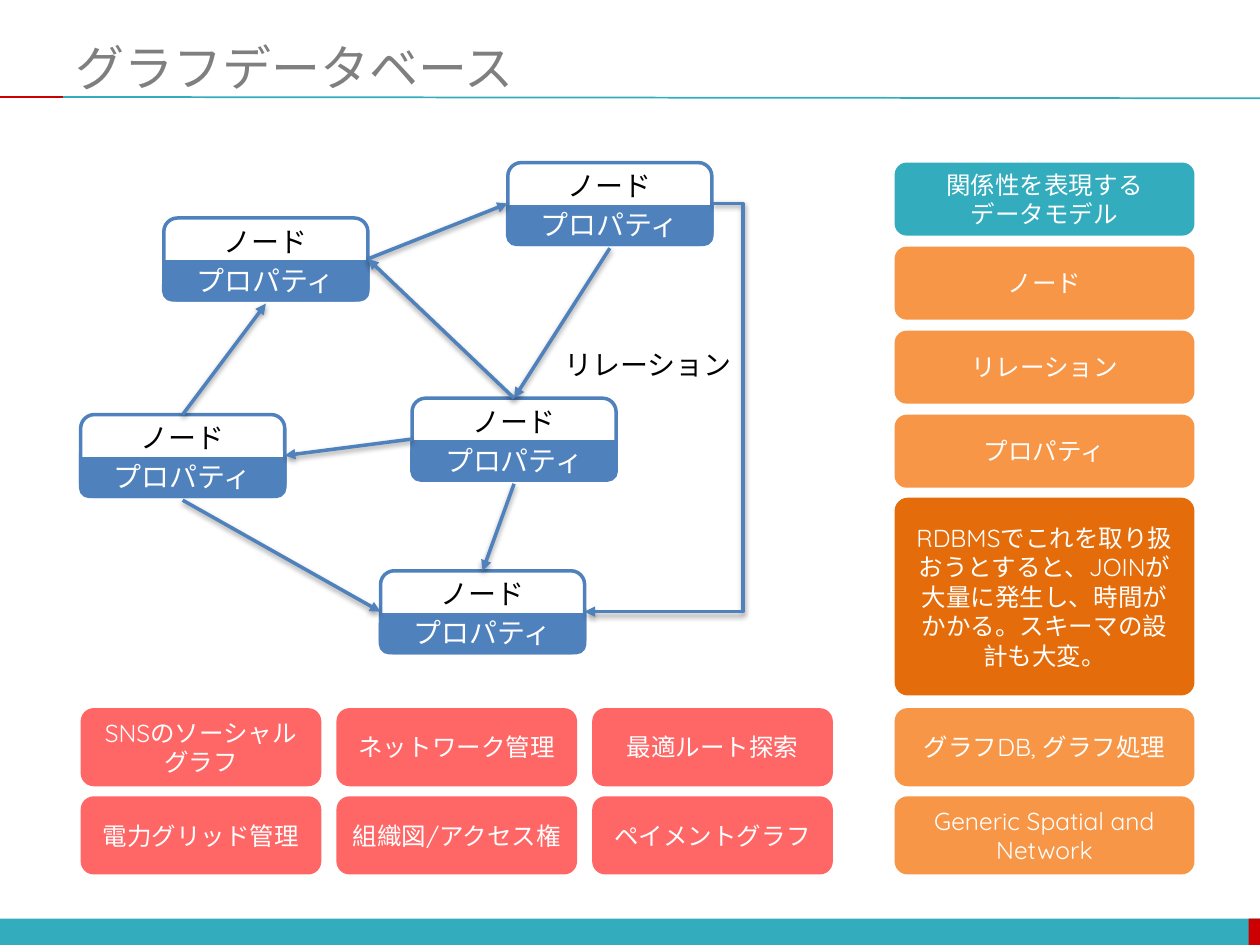
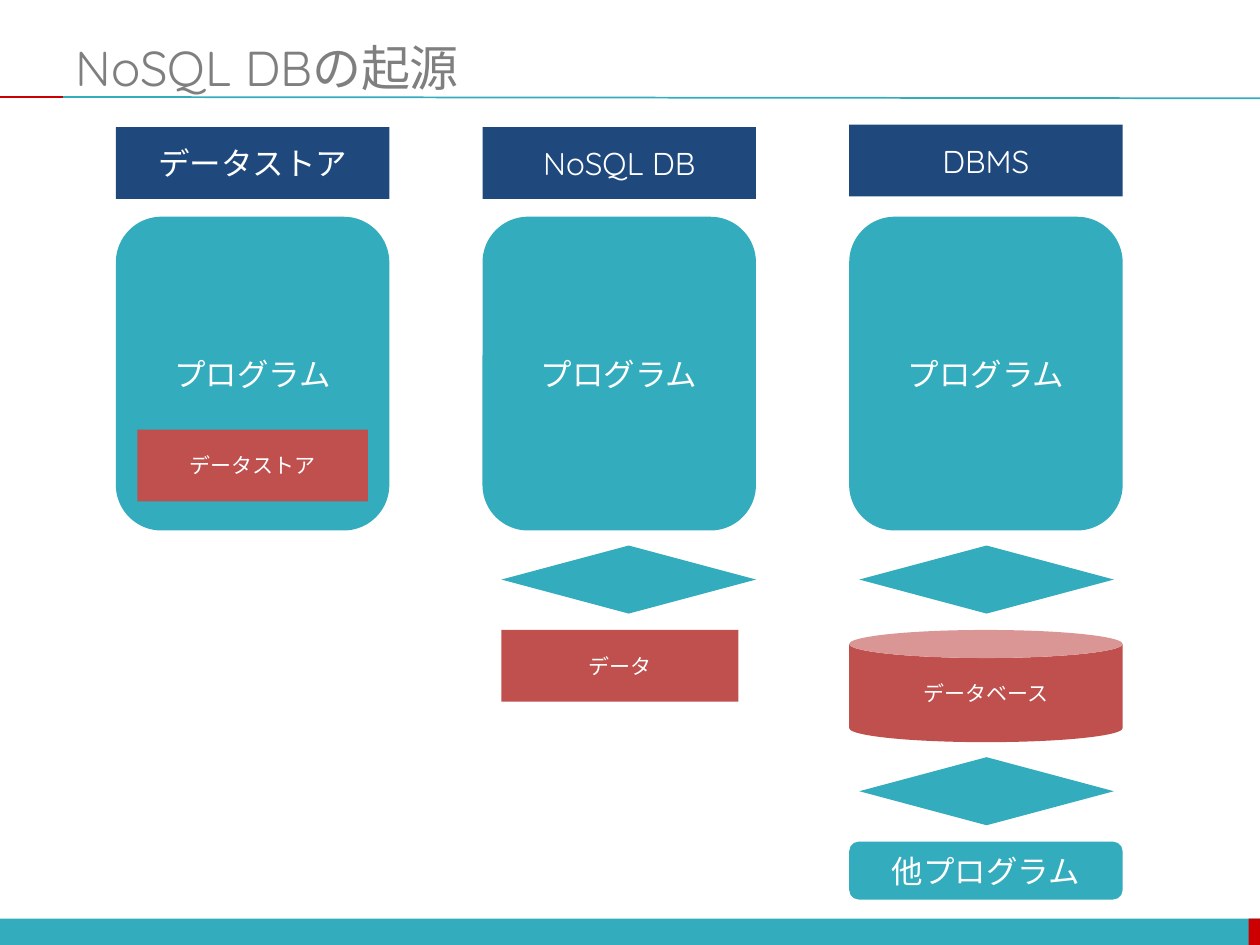
from lxml import etree
from pptx import Presentation
from pptx import util as u
from pptx.dml.color import RGBColor
from pptx.enum import shapes as kinds, text as txt
from pptx.oxml import ns

FONT = "Quicksand"
COLORS = {
    "teal": "33ACBD", "red": "CC0000", "title": "7F7F7F", "white": "FFFFFF",
    "black": "000000", "orange": "F79646", "dark_orange": "E46C0A",
    "coral": "FF6666", "blue": "4F81BD", "navy": "1F497D", "brick": "C0504D",
}
RECT = kinds.MSO_SHAPE.RECTANGLE
ROUNDED = kinds.MSO_SHAPE.ROUNDED_RECTANGLE
STRAIGHT = kinds.MSO_CONNECTOR.STRAIGHT
TOP, LEFT, BOTTOM, RIGHT = range(4)


# Shared helpers
def rgb(name):
    return RGBColor.from_string(COLORS[name])


def inches(*lengths):
    return [u.Inches(length) for length in lengths]


def sub(parent, tag, **attributes):
    return etree.SubElement(parent, ns.qn(tag), **attributes)


def write(frame, content, size, color, align=txt.PP_ALIGN.CENTER):
    frame.text = content
    for paragraph in frame.paragraphs:
        paragraph.alignment = align
        for run in paragraph.runs:
            run.font.name = FONT
            run.font.size = u.Pt(size)
            run.font.color.rgb = rgb(color)


def block(parent, kind, box, fill=None, content="", size=14, outline=None):
    shape = parent.shapes.add_shape(kind, *inches(*box))
    shape.shadow.inherit = False
    if fill:
        shape.fill.solid()
        shape.fill.fore_color.rgb = rgb(fill)
    else:
        shape.fill.background()
    if outline:
        shape.line.color.rgb = rgb(outline)
        shape.line.width = u.Pt(2)
    else:
        shape.line.fill.background()
    if content:
        shape.text_frame.vertical_anchor = txt.MSO_ANCHOR.MIDDLE
        write(shape.text_frame, content, size, "white")
    return shape


def label(parent, box, content, color):
    caption = parent.shapes.add_textbox(*inches(*box))
    caption.text_frame.word_wrap = False
    write(caption.text_frame, content, 16, color)
    return caption


def connector(slide, kind, ends, color, width):
    line = slide.shapes.add_connector(kind, *inches(*ends))
    line.line.color.rgb = rgb(color)
    line.line.width = u.Pt(width)
    return line


# Template: title position, header rule and footer band
def build_layout(layout, slide):
    title = layout.placeholders[0]
    title.left, title.top, title.width, title.height = inches(0.5, 0.3, 9.5, 0.46)
    parts = [block(slide, RECT, (0, 7.29, 10, 0.22), "teal"),
             block(slide, RECT, (9.91, 7.29, 0.1, 0.22), "red")]
    for ends, color in (((0.5, 0.77, 10, 0.78), "teal"),
                        ((0, 0.77, 0.5, 0.77), "red")):
        rule = connector(slide, STRAIGHT, ends, color, 1)
        sub(rule.element.spPr, "a:effectLst")
        parts.append(rule)
    for part in parts:
        layout.shapes.element.append(part.element)


def set_title(slide, content):
    frame = slide.shapes.title.text_frame
    frame.auto_size = txt.MSO_AUTO_SIZE.NONE
    frame.vertical_anchor = txt.MSO_ANCHOR.MIDDLE
    write(frame, content, 28, "title", txt.PP_ALIGN.LEFT)


# Graph database: nodes and relations
def graph_node(slide, left, top):
    node = slide.shapes.add_group_shape()
    width = 1.62
    block(node, ROUNDED, (left, top + 0.24, width, 0.41), "blue", outline="blue")
    block(node, RECT, (left, top + 0.12, width, 0.2), "white", outline="white")
    card = block(node, ROUNDED, (left, top, width, 0.65), outline="blue")
    label(node, (left + 0.37, top, 0.88, 0.37), "ノード", "black")
    prop = label(node, (left + 0.15, top + 0.31, 1.32, 0.37), "プロパティ", "white")
    return card, prop


def relation(slide, source, source_side, target, target_side, bend=None):
    kind = STRAIGHT if bend is None else kinds.MSO_CONNECTOR.ELBOW
    arrow = connector(slide, kind, (0, 0, 0, 0), "blue", 2)
    # Bottom arrows leave from under the property label
    arrow.begin_connect(source[source_side == BOTTOM], source_side)
    arrow.end_connect(target[target_side == BOTTOM], target_side)
    properties = arrow.element.spPr
    sub(properties.find(ns.qn("a:ln")), "a:tailEnd", type="triangle")
    if bend is not None:
        guides = properties.find(ns.qn("a:prstGeom")).find(ns.qn("a:avLst"))
        sub(guides, "a:gd", name="adj1", fmla=f"val {round(bend * 100000)}")
    shadow = sub(sub(properties, "a:effectLst"), "a:outerShdw", blurRad="40000",
                 dist="20000", dir="5400000", rotWithShape="0")
    sub(sub(shadow, "a:srgbClr", val=COLORS["black"]), "a:alpha", val="38000")


def node_graph(slide, left, top):
    places = {"upper_left": (0.66, 0.44), "left": (0, 2), "upper_right": (3.39, 0),
              "lower": (2.38, 3.24), "center": (2.63, 1.87)}
    nodes = {name: graph_node(slide, left + dx, top + dy)
             for name, (dx, dy) in places.items()}
    for source, source_side, target, target_side in (
            ("upper_left", RIGHT, "upper_right", LEFT),
            ("upper_right", BOTTOM, "center", TOP),
            ("center", TOP, "upper_left", RIGHT),
            ("center", LEFT, "left", RIGHT),
            ("center", BOTTOM, "lower", TOP),
            ("left", BOTTOM, "lower", LEFT),
            ("left", TOP, "upper_left", BOTTOM)):
        relation(slide, nodes[source], source_side, nodes[target], target_side)
    relation(slide, nodes["upper_right"], RIGHT, nodes["lower"], RIGHT, -0.245)
    label(slide, (left + 3.73, top + 1.42, 1.55, 0.37), "リレーション", "black")


def model_column(slide, left, top):
    width = 2.38
    terms = ("関係性を表現する\nデータモデル", "ノード", "リレーション", "プロパティ")
    for row, term in enumerate(terms):
        block(slide, ROUNDED, (left, top + row * 0.667, width, 0.58),
              "orange" if row else "teal", term)
    problem = block(slide, ROUNDED, (left, top + 2.66, width, 1.57), "dark_orange",
                    "RDBMSでこれを取り扱おうとすると、JOINが大量に発生し、"
                    "時間がかかる。スキーマの設計も大変。")
    problem.adjustments[0] = 0.067
    for row, product in enumerate(("グラフDB, グラフ処理", "Generic Spatial and Network")):
        block(slide, ROUNDED, (left, top + 4.33 + row * 0.7, width, 0.62),
              "orange", product)


def use_case_grid(slide, left, top):
    use_cases = ("SNSのソーシャルグラフ", "ネットワーク管理", "最適ルート探索",
                 "電力グリッド管理", "組織図/アクセス権", "ペイメントグラフ")
    for index, use_case in enumerate(use_cases):
        row, column = divmod(index, 3)
        block(slide, ROUNDED, (left + column * 2.03, top + row * 0.7, 1.91, 0.62),
              "coral", use_case)


def graph_database_slide(slide):
    set_title(slide, "グラフデータベース")
    node_graph(slide, 0.64, 1.29)
    model_column(slide, 7.1, 1.29)
    use_case_grid(slide, 0.64, 5.62)


# Origin of NoSQL: one column per architecture
def program_column(slide, left, heading_top, heading):
    block(slide, RECT, (left, heading_top, 2.17, 0.57), "navy", heading, 18)
    block(slide, ROUNDED, (left, 1.72, 2.17, 2.49), "teal", "プログラム", 18)


def exchange_arrow(slide, left, top):
    arrow = block(slide, kinds.MSO_SHAPE.UP_DOWN_ARROW, (left, top, 2.02, 0.54), "teal")
    arrow.adjustments[0], arrow.adjustments[1] = 0.445, 0.296


def datastore_column(slide, left):
    program_column(slide, left, 1.01, "データストア")
    block(slide, RECT, (left + 0.17, 3.41, 1.83, 0.57), "brick", "データストア", 12)


def nosql_column(slide, left):
    program_column(slide, left, 1.01, "NoSQL DB")
    exchange_arrow(slide, left + 0.15, 4.33)
    block(slide, RECT, (left + 0.15, 5, 1.88, 0.57), "brick", "データ", 12)


def dbms_column(slide, left):
    program_column(slide, left, 0.99, "DBMS")
    for top in (4.33, 6.01):
        exchange_arrow(slide, left + 0.08, top)
    block(slide, kinds.MSO_SHAPE.CAN, (left, 5, 2.17, 0.89), "brick", "データベース", 12)
    block(slide, ROUNDED, (left, 6.68, 2.17, 0.46), "teal", "他プログラム", 18)


def origin_slide(slide):
    set_title(slide, "NoSQL DBの起源")
    columns = (datastore_column, nosql_column, dbms_column)
    for index, build_column in enumerate(columns):
        build_column(slide, 0.92 + index * 2.91)


def main():
    deck = Presentation()
    deck.slide_width, deck.slide_height = inches(10, 7.5)
    layout = deck.slide_layouts[5]
    graph, origin = (deck.slides.add_slide(layout) for _ in range(2))
    build_layout(layout, graph)
    graph_database_slide(graph)
    origin_slide(origin)
    deck.save("out.pptx")


if __name__ == "__main__":
    main()
